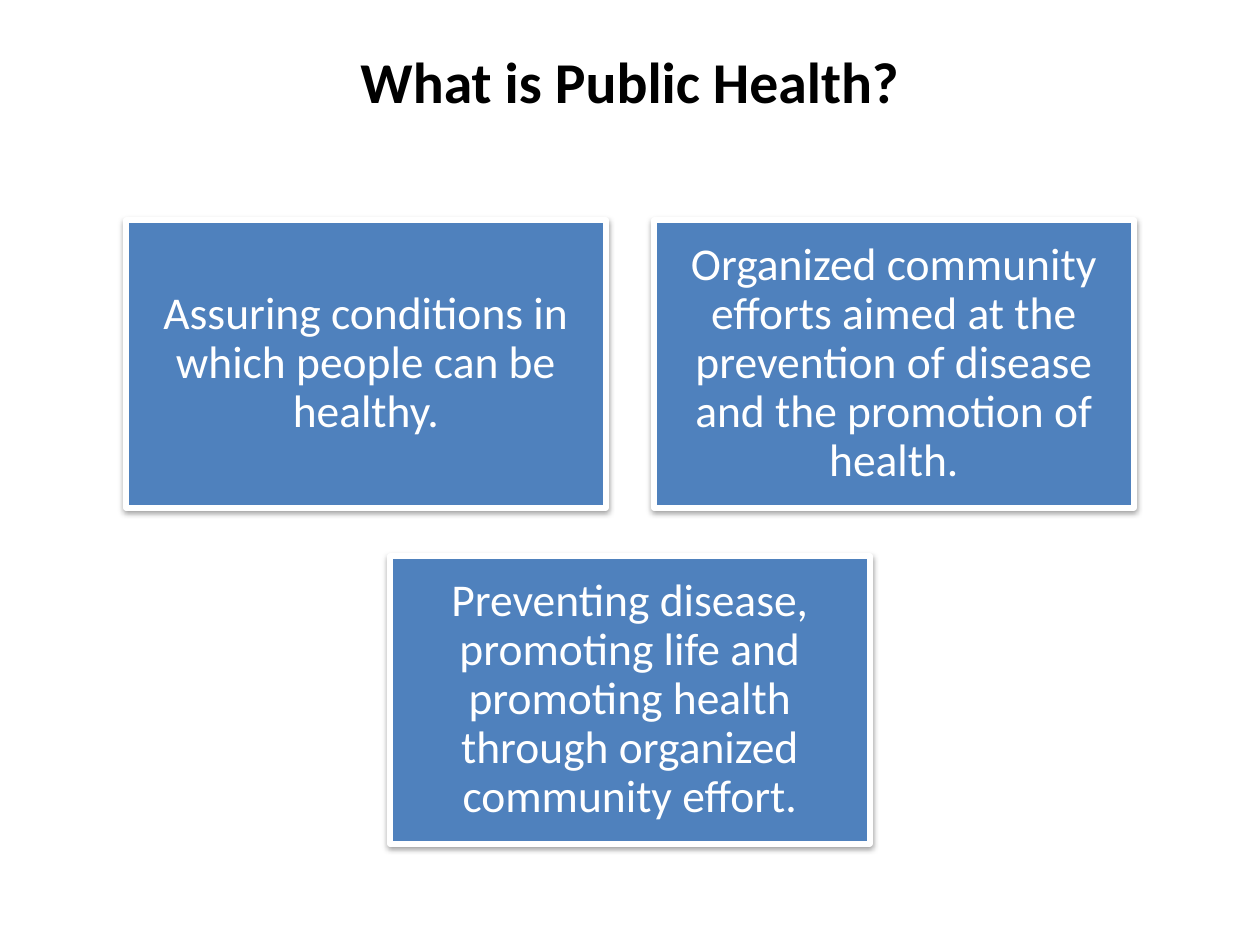
from lxml.etree import SubElement
from pptx import Presentation
from pptx.dml.color import RGBColor
from pptx.enum.shapes import MSO_SHAPE
from pptx.enum.text import MSO_ANCHOR, PP_ALIGN
from pptx.oxml.ns import qn
from pptx.util import Emu, Pt

SLIDE_WIDTH, SLIDE_HEIGHT = 1260, 945
CARD_WIDTH, CARD_HEIGHT, GAP = 480, 288, 48
CARDS_TOP = 220
CARD_ROWS = [
    [
        "Assuring conditions in which people can be healthy.",
        "Organized community efforts aimed at the prevention of disease "
        "and the promotion of health.",
    ],
    [
        "Preventing disease, promoting life and promoting health "
        "through organized community effort.",
    ],
]


def px(length):
    return Emu(round(length * 914400 / 126))


def color(value):
    return RGBColor.from_string(value)


class SlideBuilder:
    """Draws the title and cards of one slide in a shared style."""

    font = "Calibri"
    ink = "000000"
    paper = "FFFFFF"
    card_fill = "4F81BD"

    def __init__(self, slide):
        self.slide = slide

    def add_text(self, shape, text, size, ink, inset, anchor, bold=False, spacing=1.0):
        frame = shape.text_frame
        frame.word_wrap = True
        frame.vertical_anchor = anchor
        frame.margin_left = frame.margin_right = px(inset)
        frame.margin_top = frame.margin_bottom = px(inset)
        paragraph = frame.paragraphs[0]
        paragraph.alignment = PP_ALIGN.CENTER
        paragraph.line_spacing = spacing
        run = paragraph.add_run()
        run.text = text
        run.font.name = self.font
        run.font.size = Pt(size)
        run.font.bold = bold
        run.font.color.rgb = color(ink)

    def title(self, text, left, top, width, height):
        heading = self.slide.shapes.add_textbox(px(left), px(top), px(width), px(height))
        self.add_text(heading, text, 33, self.ink, 8, MSO_ANCHOR.TOP, bold=True)

    def card(self, text, left, top):
        card = self.slide.shapes.add_shape(
            MSO_SHAPE.RECTANGLE, px(left), px(top), px(CARD_WIDTH), px(CARD_HEIGHT)
        )
        card.fill.solid()
        card.fill.fore_color.rgb = color(self.card_fill)
        card.line.color.rgb = color(self.paper)
        card.line.width = Pt(3)
        self.shadow(card)
        self.add_text(card, text, 26, self.paper, 14, MSO_ANCHOR.MIDDLE, spacing=0.9)

    def shadow(self, shape):
        shape.shadow.inherit = False
        effects = shape._element.spPr.find(qn("a:effectLst"))
        outer = SubElement(
            effects, qn("a:outerShdw"),
            blurRad="40000", dist="20000", dir="5400000", rotWithShape="0",
        )
        tint = SubElement(outer, qn("a:srgbClr"), val=self.ink)
        SubElement(tint, qn("a:alpha"), val="38000")


def main():
    deck = Presentation()
    deck.slide_width, deck.slide_height = px(SLIDE_WIDTH), px(SLIDE_HEIGHT)
    builder = SlideBuilder(deck.slides.add_slide(deck.slide_layouts[6]))
    builder.title("What is Public Health?", 63, 38, 1134, 157)
    for row, texts in enumerate(CARD_ROWS):
        row_width = len(texts) * (CARD_WIDTH + GAP) - GAP
        row_left = (SLIDE_WIDTH - row_width) // 2
        for column, text in enumerate(texts):
            left = row_left + column * (CARD_WIDTH + GAP)
            builder.card(text, left, CARDS_TOP + row * (CARD_HEIGHT + GAP))
    deck.save("out.pptx")


if __name__ == "__main__":
    main()
